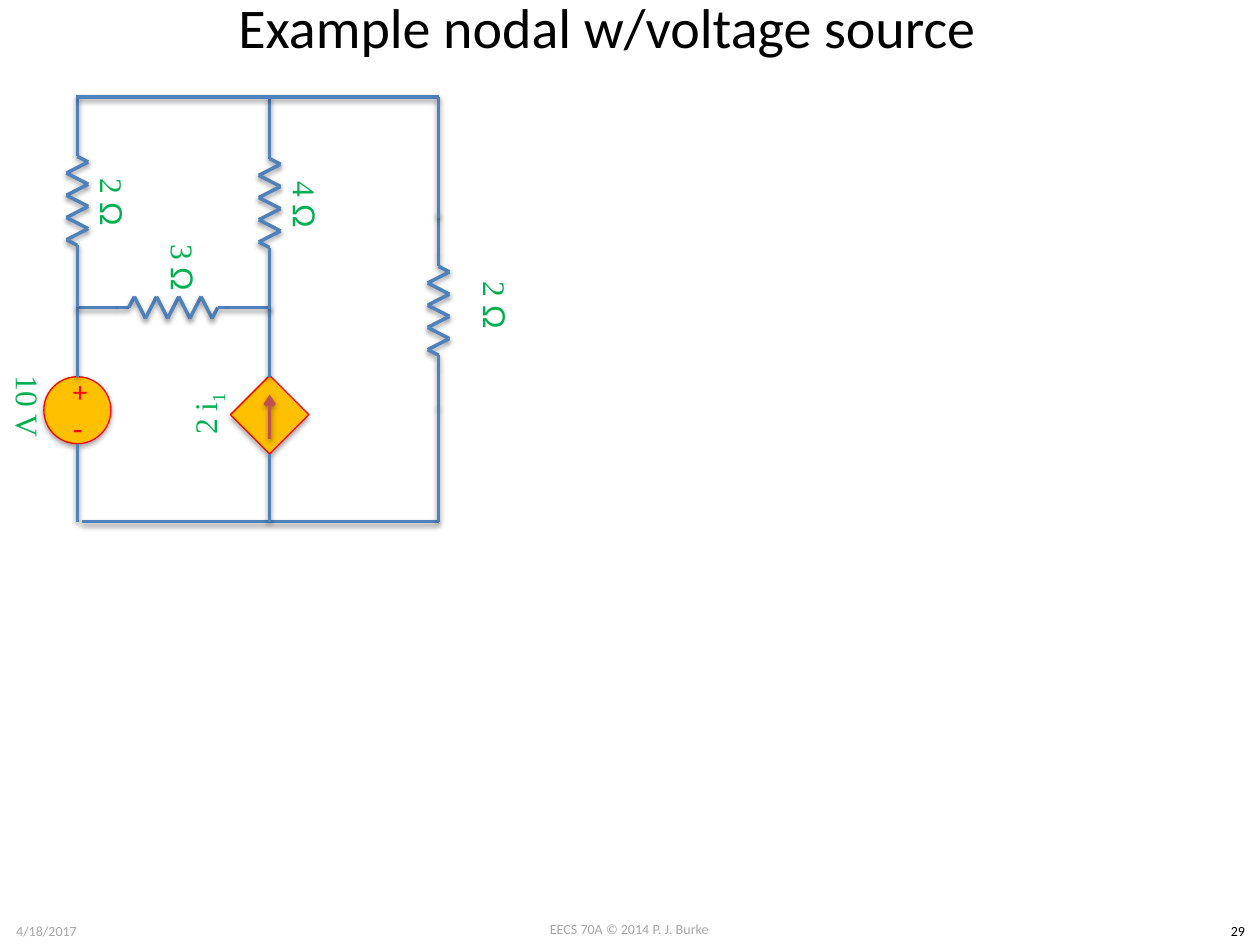
from itertools import accumulate, pairwise

from lxml import etree
from pptx import Presentation
from pptx.dml.color import RGBColor
from pptx.enum.shapes import MSO_CONNECTOR, MSO_SHAPE
from pptx.enum.text import MSO_ANCHOR, PP_ALIGN
from pptx.oxml.ns import qn
from pptx.util import Pt

STRAIGHT = MSO_CONNECTOR.STRAIGHT
OVAL, RECTANGLE = MSO_SHAPE.OVAL, MSO_SHAPE.RECTANGLE
CENTER = PP_ALIGN.CENTER
TOP, MIDDLE = MSO_ANCHOR.TOP, MSO_ANCHOR.MIDDLE

BLACK = RGBColor(0x00, 0x00, 0x00)
GRAY = RGBColor(0xA6, 0xA6, 0xA6)
WIRE_BLUE = RGBColor(0x4F, 0x81, 0xBD)
ARROW_RED = RGBColor(0xC0, 0x50, 0x4D)
SOURCE_RED = RGBColor(0xFF, 0x00, 0x00)
SOURCE_GOLD = RGBColor(0xFF, 0xC0, 0x00)
VALUE_GREEN = RGBColor(0x00, 0xB0, 0x50)

SERIF, SANS, SYMBOL = "Times New Roman", "Calibri", "Arial"

# Circuit grid in points: the three branches and the three node levels
LEFT_X, MIDDLE_X, RIGHT_X = 44.2, 154.1, 250.6
TOP_Y, NODE_Y, BOTTOM_Y = 55.4, 175.7, 298.1

ZIGZAG_PITCH = 6.35
ZIGZAG_HALF_WIDTH = 6.2
ZIGZAG_PEAKS = 8
LONG_LEADS = (35.3,)
SPLIT_LEADS = (24.1, 6.3)


def add_shadow(shape, opacity, distance):
    effects = etree.SubElement(shape._element.spPr, qn("a:effectLst"))
    shadow = etree.SubElement(
        effects, qn("a:outerShdw"), blurRad=str(Pt(3.1)),
        dist=str(Pt(distance)), dir="5400000", rotWithShape="0")
    color = etree.SubElement(shadow, qn("a:srgbClr"), val=str(BLACK))
    etree.SubElement(color, qn("a:alpha"), val=str(opacity * 1000))


def add_wire(shapes, start, end, color=WIRE_BLUE, arrow=False):
    wire = shapes.add_connector(STRAIGHT, *(Pt(v) for v in (*start, *end)))
    wire.line.color.rgb = color
    wire.line.width = Pt(2)
    if arrow:
        etree.SubElement(wire.line._get_or_add_ln(), qn("a:tailEnd"), type="arrow")
    add_shadow(wire, 38, 1.6)


def add_text(shapes, box, runs, size, color, font=SANS, anchor=MIDDLE, rotation=0):
    """Add a centred text box; each run is (text, font or None, baseline or None)."""
    text_box = shapes.add_textbox(*(Pt(v) for v in box))
    text_box.rotation = rotation
    frame = text_box.text_frame
    frame.word_wrap = True
    frame.vertical_anchor = anchor
    paragraph = frame.paragraphs[0]
    paragraph.alignment = CENTER
    for text, run_font, baseline in runs:
        run = paragraph.add_run()
        run.text = text
        run.font.name = run_font or font
        run.font.size = Pt(size)
        run.font.color.rgb = color
        if baseline:
            run._r.get_or_add_rPr().set("baseline", str(baseline * 1000))


def add_plain_text(shapes, box, text, size, color, anchor=MIDDLE):
    add_text(shapes, box, [(text, None, None)], size, color, anchor=anchor)


def add_value(shapes, center_x, center_y, runs, rotation=90):
    width, height = 85.7, 52.6
    box = (center_x - width / 2, center_y - height / 2, width, height)
    add_text(shapes, box, runs, 18, VALUE_GREEN, SERIF, rotation=rotation)


def add_resistance(shapes, center_x, center_y, ohms):
    add_value(shapes, center_x, center_y,
              [(f"{ohms} ", None, None), ("Ω", SYMBOL, None)])


def add_resistor(shapes, x, y, leads, horizontal=False):
    """Draw leads and zigzag from (x, y), running down or to the right."""
    steps = [*leads, ZIGZAG_PITCH / 2, *[ZIGZAG_PITCH] * (ZIGZAG_PEAKS - 1),
             ZIGZAG_PITCH / 2, *reversed(leads)]
    straight = [0] * (len(leads) + 1)
    sides = [*straight, *[ZIGZAG_HALF_WIDTH, -ZIGZAG_HALF_WIDTH] * (ZIGZAG_PEAKS // 2),
             *straight]
    points = [(x + along, y - side) if horizontal else (x + side, y + along)
              for along, side in zip(accumulate(steps, initial=0), sides)]
    for start, end in pairwise(points):
        add_wire(shapes, start, end)


def add_source_body(shapes, kind, center_x, center_y, size, rotation=0):
    body = shapes.add_shape(kind, Pt(center_x - size / 2), Pt(center_y - size / 2),
                            Pt(size), Pt(size))
    body.rotation = rotation
    body.fill.solid()
    body.fill.fore_color.rgb = SOURCE_GOLD
    body.line.color.rgb = SOURCE_RED
    body.line.width = Pt(0.75)
    add_shadow(body, 35, 1.8)


def add_voltage_source(shapes):
    add_source_body(shapes, OVAL, LEFT_X, 234.4, 38.3)
    add_plain_text(shapes, (34.6, 211.7, 18.7, 23.8), "+", 16.6, SOURCE_RED)
    add_plain_text(shapes, (34.6, 232.6, 18.7, 23.8), "-", 18, SOURCE_RED)
    add_wire(shapes, (LEFT_X, BOTTOM_Y), (LEFT_X, 253.5))
    add_wire(shapes, (LEFT_X, 215.3), (LEFT_X, NODE_Y))


def add_dependent_current_source(shapes):
    add_source_body(shapes, RECTANGLE, MIDDLE_X, 237, 31.7, rotation=45)
    add_wire(shapes, (MIDDLE_X, 215.3), (MIDDLE_X, NODE_Y))
    add_wire(shapes, (MIDDLE_X, BOTTOM_Y), (MIDDLE_X, 259.2))
    add_wire(shapes, (MIDDLE_X, 250.6), (MIDDLE_X, 225.4), ARROW_RED, arrow=True)
    add_value(shapes, 118.4, 236.5, [("2 i", None, None), ("1", None, -25)], rotation=270)


def add_circuit(shapes):
    def group():
        return shapes.add_group_shape().shapes

    add_resistor(group(), RIGHT_X, 121.8, SPLIT_LEADS)
    add_resistor(group(), 43.2, NODE_Y, SPLIT_LEADS, horizontal=True)
    add_resistance(shapes, 283.3, 174.6, 2)
    add_resistance(shapes, 104.8, 153, 3)
    add_voltage_source(group())

    left_branch = group()
    add_resistance(left_branch, 64.4, 115.6, 2)
    add_resistor(left_branch, LEFT_X, 54.1, LONG_LEADS)

    add_wire(shapes, (46.8, BOTTOM_Y), (RIGHT_X, BOTTOM_Y))
    add_dependent_current_source(group())

    middle_branch = group()
    add_resistance(middle_branch, 174.6, 117, 4)
    add_resistor(middle_branch, MIDDLE_X, TOP_Y, LONG_LEADS)

    add_wire(shapes, (LEFT_X, TOP_Y), (RIGHT_X, TOP_Y))
    add_wire(shapes, (RIGHT_X, 124.6), (RIGHT_X, TOP_Y))
    add_wire(shapes, (RIGHT_X, 232.6), (RIGHT_X, BOTTOM_Y))
    add_value(shapes, 16.2, 232.2, [("10 V", None, None)])


def add_footer(shapes):
    for box, text, color in (
        ((275.8, 522.7, 167.8, 17), "EECS 70A © 2014 P. J. Burke", GRAY),
        ((0, 523.4, 53.3, 17), "4/18/2017", GRAY),
        ((694.8, 523.4, 25.2, 17), "29", BLACK),
    ):
        add_plain_text(shapes, box, text, 8, color, TOP)


def main():
    presentation = Presentation()
    presentation.slide_width = Pt(720)
    presentation.slide_height = Pt(540)
    shapes = presentation.slides.add_slide(presentation.slide_layouts[6]).shapes
    add_footer(shapes)
    add_plain_text(shapes, (23, -21.6, 648, 73.4), "Example nodal w/voltage source", 32, BLACK)
    add_circuit(shapes)
    presentation.save("out.pptx")


if __name__ == "__main__":
    main()
